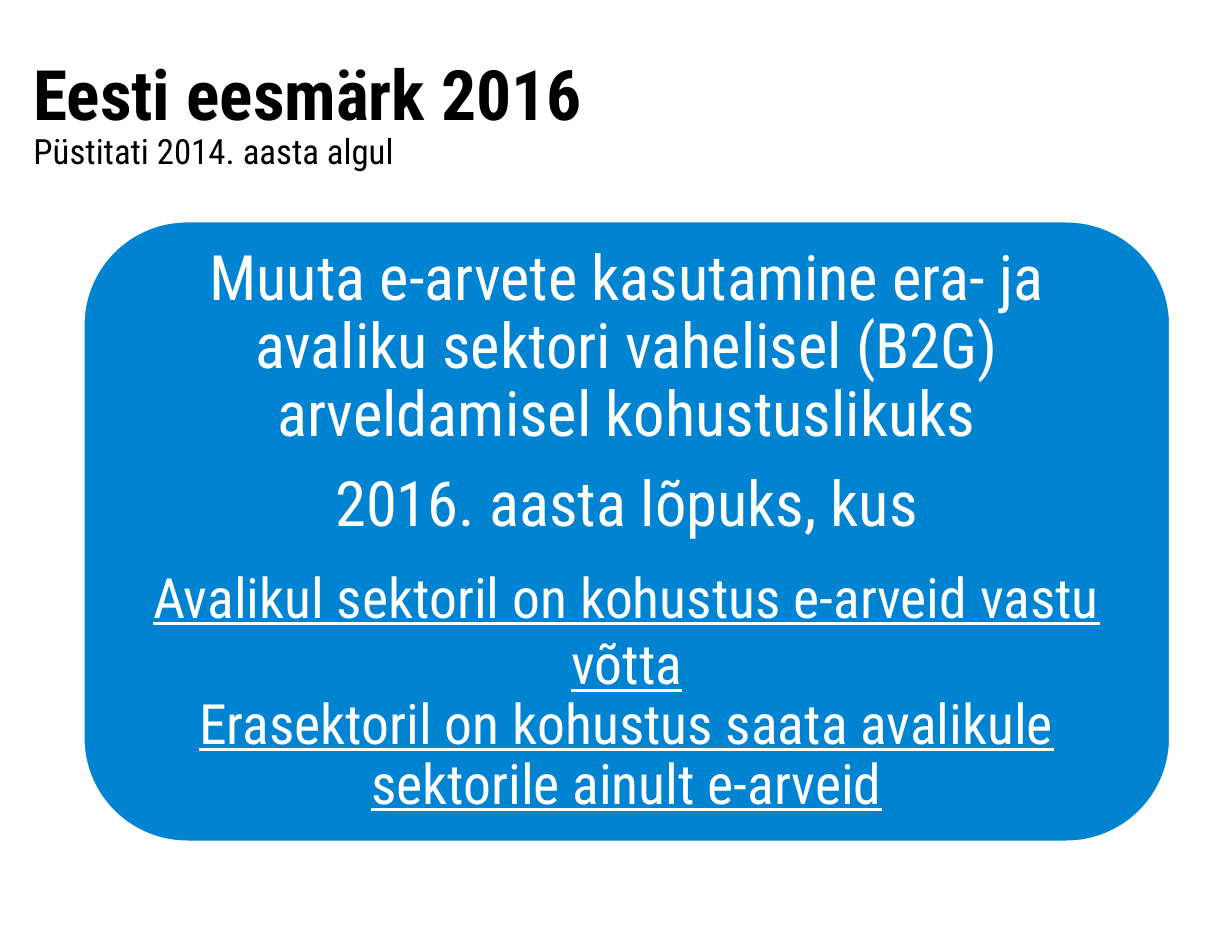
import pptx
import pptx.util
import pptx.dml.color
import pptx.enum.shapes
import pptx.enum.text

PX = 7200
FONT = "Roboto Condensed"


def px(*nums):
    """Turn px lengths into EMU."""
    return [pptx.util.Emu(n * PX) for n in nums]


def color(code):
    """Turn a hex string into a colour."""
    return pptx.dml.color.RGBColor.from_string(code)


def style(font, size, code):
    """Set the face, size and colour of a font."""
    font.name = FONT
    font.size = pptx.util.Pt(size)
    font.color.rgb = color(code)


def frame(slide, box, pads):
    """Add a wrapping text box and return its text frame."""
    text = slide.shapes.add_textbox(*px(*box)).text_frame
    text.word_wrap = True
    (text.margin_left, text.margin_top,
     text.margin_right, text.margin_bottom) = px(*pads)
    return text


def header(slide, box, title, note):
    """Place the title with a smaller note on the next line."""
    para = frame(slide, box, (0, 8, 0, 0)).paragraphs[0]
    para.line_spacing = 0.88
    style(para.font, 40, "000000")
    head = para.add_run()
    head.text = title
    style(head.font, 40, "000000")
    head.font.bold = True
    para.add_line_break()
    sub = para.add_run()
    sub.text = note
    style(sub.font, 20, "000000")


def panel(slide, box, rows):
    """Place the rounded goal panel and its centred text."""
    left, top, width, height = box
    card = slide.shapes.add_shape(
        pptx.enum.shapes.MSO_SHAPE.ROUNDED_RECTANGLE, *px(*box))
    card.shadow.inherit = False
    card.fill.solid()
    card.fill.fore_color.rgb = color("0084D1")
    card.line.color.rgb = color("FFFFFF")
    card.line.width = pptx.util.Pt(1)

    gap = 30
    area = (left + gap, top + gap, width - 2 * gap, height - 2 * gap)
    text = frame(slide, area, (19, 19, 19, 19))
    text.vertical_anchor = pptx.enum.text.MSO_ANCHOR.MIDDLE
    for i, (words, size, line, after, under) in enumerate(rows):
        para = text.add_paragraph() if i else text.paragraphs[0]
        para.text = words
        para.alignment = pptx.enum.text.PP_ALIGN.CENTER
        para.line_spacing = line
        para.space_after = pptx.util.Pt(after)
        style(para.font, size, "FFFFFF")
        para.font.underline = under


def main():
    """Build the slide and save it."""
    deck = pptx.Presentation()
    deck.slide_width, deck.slide_height = px(1250, 950)
    slide = deck.slides.add_slide(deck.slide_layouts[6])
    header(slide, (34, 55, 1152, 149),
           "Eesti eesmärk 2016", "Püstitati 2014. aasta algul")
    panel(slide, (85, 225, 1102, 629), [
        ("Muuta e-arvete kasutamine era- ja avaliku sektori vahelisel "
         "(B2G) arveldamisel kohustuslikuks", 36, 0.9, 13, False),
        ("2016. aasta lõpuks, kus", 36, 0.9, 13, False),
        ("Avalikul sektoril on kohustus e-arveid vastu võtta",
         32, 1.0, 0, True),
        ("Erasektoril on kohustus saata avalikule sektorile ainult e-arveid",
         32, 0.9, 0, True),
    ])
    deck.save("out.pptx")


if __name__ == "__main__":
    main()
